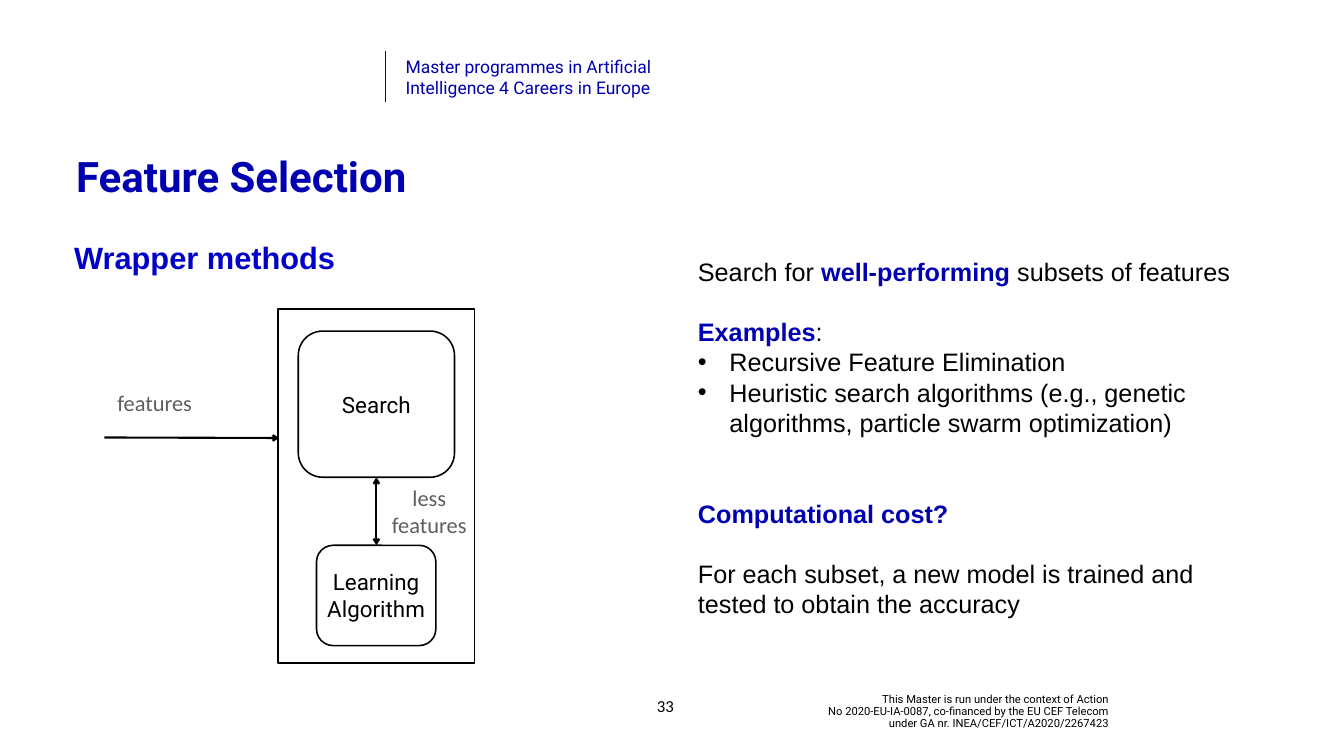
from typing import Any, NamedTuple

from lxml.etree import SubElement
from pptx import Presentation
from pptx.dml.color import RGBColor
from pptx.enum.shapes import MSO_CONNECTOR as Connector, MSO_SHAPE as Preset
from pptx.enum.text import MSO_ANCHOR as Anchor, MSO_AUTO_SIZE as AutoSize, PP_ALIGN as Align
from pptx.oxml.ns import qn
from pptx.util import Pt

BLUE, BRIGHT_BLUE = "0000B0", "0100C8"
BLACK, GREY, WHITE = "000000", "5E5E5E", "FFFFFF"
LINE = 43.2
NARROW = (4.3, 4.3)
NORMAL = (7.2, 3.6)


class Area(NamedTuple):
    left: float
    top: float
    width: float
    height: float


class Span(NamedTuple):
    text: str
    color: str | None = None
    bold: bool | None = None


class Para(NamedTuple):
    spans: list[Span]
    gap: float = 0
    bullet: bool = False


class Node(NamedTuple):
    preset: Any
    area: Area
    label: str


class Label(NamedTuple):
    area: Area
    text: str
    format: dict[str, Any]


class Arrow(NamedTuple):
    start: tuple[float, float]
    end: tuple[float, float]
    color: str = BLACK
    width: float = 3
    heads: tuple[str, ...] = ()


def paint(target: Any, color: str) -> None:
    target.rgb = RGBColor.from_string(color)


def place(shape: Any, area: Area) -> None:
    shape.left, shape.top, shape.width, shape.height = map(Pt, area)


def add_bullet(para: Any) -> None:
    properties = para._p.get_or_add_pPr()
    properties.set("marL", str(Pt(45)))
    properties.set("indent", str(Pt(-45)))
    SubElement(properties, qn("a:buFont"), typeface="Arial")
    SubElement(properties, qn("a:buChar"), char="•")


def write(shape: Any, text: str | list[Para], *, font: str = "Roboto", size: float = 32,
          color: str = BLACK, bold: bool = False, align: Any = Align.LEFT,
          anchor: Any = Anchor.MIDDLE, spacing: Any = None,
          insets: tuple[float, float] = NARROW) -> None:
    frame = shape.text_frame
    frame.word_wrap = True
    frame.auto_size = AutoSize.NONE
    frame.vertical_anchor = anchor
    frame.margin_left = frame.margin_right = Pt(insets[0])
    frame.margin_top = frame.margin_bottom = Pt(insets[1])
    content = [Para([Span(text)])] if isinstance(text, str) else text
    for index, item in enumerate(content):
        para = frame.add_paragraph() if index else frame.paragraphs[0]
        para.alignment = align
        para.line_spacing = spacing
        if item.gap:
            para.space_before = Pt(item.gap)
        if item.bullet:
            add_bullet(para)
        for span in item.spans:
            for row, words in enumerate(span.text.split("\n")):
                if row:
                    para.add_line_break()
                run = para.add_run()
                run.text = words
                run.font.name = font
                run.font.size = Pt(size)
                run.font.bold = bold if span.bold is None else span.bold
                paint(run.font.color, span.color or color)


def add_label(shapes: Any, label: Label) -> None:
    box = shapes.add_textbox(*map(Pt, label.area))
    write(box, label.text, **label.format)


def add_node(shapes: Any, node: Node) -> None:
    shape = shapes.add_shape(node.preset, *map(Pt, node.area))
    shape.shadow.inherit = False
    shape.fill.solid()
    paint(shape.fill.fore_color, WHITE)
    paint(shape.line.color, BLACK)
    shape.line.width = Pt(2.25)
    if node.label:
        write(shape, node.label, align=Align.CENTER)


def add_arrow(shapes: Any, arrow: Arrow) -> None:
    line = shapes.add_connector(Connector.STRAIGHT, *map(Pt, arrow.start + arrow.end))
    paint(line.line.color, arrow.color)
    line.line.width = Pt(arrow.width)
    outline = line.line._get_or_add_ln()
    for head in arrow.heads:
        SubElement(outline, qn(f"a:{head}"), type="arrow")
    SubElement(line._element.spPr, qn("a:effectLst"))


def key(text: str) -> Span:
    return Span(text, BLUE, True)


GREY_LABEL = dict(font="Calibri", color=GREY)
DIAGRAM = [
    Node(Preset.RECTANGLE, Area(397.4, 441.4, 280.8, 505.4), ""),
    Label(Area(163.4, 552.2, 130.3, 46.8), "features", GREY_LABEL),
    Node(Preset.ROUNDED_RECTANGLE, Area(426.2, 473, 223.2, 208.8), "Search"),
    Label(Area(537.8, 687.6, 151.2, 85.7),
          [Para([Span("less")]), Para([Span("features")])],
          dict(GREY_LABEL, align=Align.CENTER)),
    Arrow((149, 625), (398.9, 625.7), heads=("tailEnd",)),
    Arrow((537.8, 681.8), (537.8, 779), heads=("headEnd", "tailEnd")),
    Node(Preset.ROUNDED_RECTANGLE, Area(452.2, 779, 170.6, 143.3), "Learning Algorithm"),
]
EXPLANATION = [
    Para([Span("Search for "), key("well-performing"), Span(" subsets of features")]),
    Para([key("Examples"), Span(":")], gap=LINE),
    Para([Span("Recursive Feature Elimination")], bullet=True),
    Para([Span("Heuristic search algorithms (e.g., genetic algorithms, "
               "particle swarm optimization)")], bullet=True),
    Para([key("Computational cost?")], gap=2 * LINE),
    Para([Span("For each subset, a new model is trained and tested to obtain the accuracy")],
         gap=LINE),
]
LABELS = [
    Label(Area(1081.4, 989.3, 509.8, 54.7),
          "This Master is run under the context of Action\n"
          "No 2020-EU-IA-0087, co-financed by the EU CEF Telecom\n"
          "under GA nr. INEA/CEF/ICT/A2020/2267423",
          dict(size=16, align=Align.RIGHT, spacing=0.9, insets=NORMAL)),
    Label(Area(572.4, 76.3, 458.6, 67.7),
          "Master programmes in Artificial\nIntelligence 4 Careers in Europe",
          dict(size=25, color=BLUE, anchor=Anchor.TOP, insets=NORMAL)),
    Label(Area(101.5, 336.2, 802.8, 61.2), "Wrapper methods",
          dict(font="Arial", size=44, color=BRIGHT_BLUE, bold=True)),
    Label(Area(992.9, 359.3, 802.8, 531.4), EXPLANATION,
          dict(font="Arial", size=36, spacing=Pt(LINE))),
    Label(Area(910.8, 979.9, 79.9, 57.6), "33",
          dict(font="Calibri", size=24, align=Align.CENTER, insets=NORMAL)),
]
DRAWERS = {Node: add_node, Label: add_label, Arrow: add_arrow}


def main() -> None:
    deck = Presentation()
    deck.slide_width, deck.slide_height = Pt(1920.24), Pt(1080)
    page = deck.slides.add_slide(deck.slide_layouts[5])
    title = page.shapes.title
    place(title, Area(101.5, 213.1, 1699.9, 122.4))
    write(title, "Feature Selection", size=60, color=BLUE, bold=True,
          anchor=Anchor.TOP, spacing=Pt(70), insets=NORMAL)
    add_arrow(page.shapes, Arrow((550.8, 72.7), (550.8, 146.2), BLUE, 0.5))
    for label in LABELS:
        add_label(page.shapes, label)
    diagram = page.shapes.add_group_shape()
    for part in DIAGRAM:
        DRAWERS[type(part)](diagram.shapes, part)
    deck.save("out.pptx")


if __name__ == "__main__":
    main()
